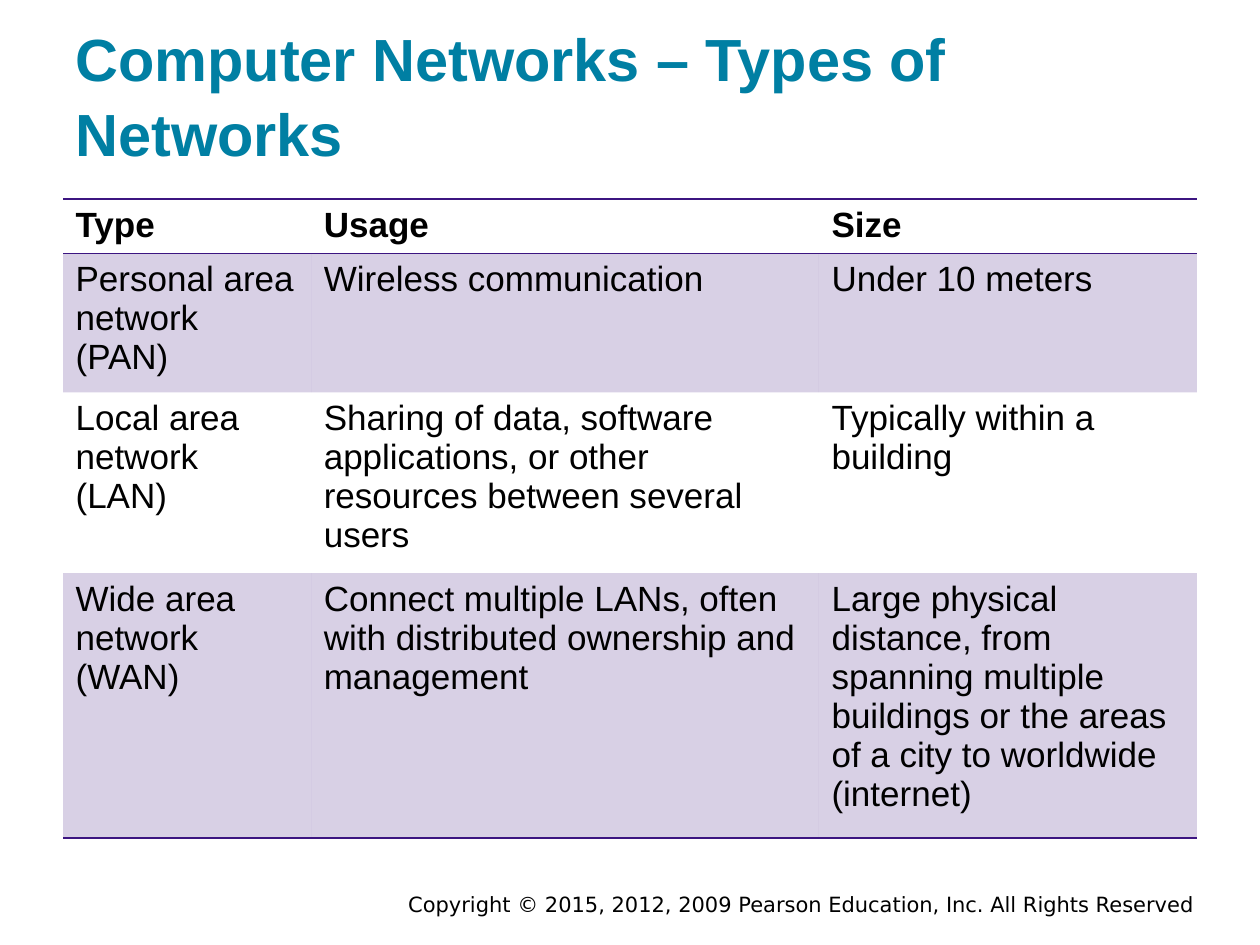
from dataclasses import dataclass

from lxml.etree import SubElement
from pptx import Presentation
from pptx.dml.color import RGBColor
from pptx.enum.text import MSO_ANCHOR, MSO_AUTO_SIZE, PP_ALIGN
from pptx.oxml.ns import qn
from pptx.util import Inches, Pt

TEAL = "007FA3"
PURPLE = "3C1581"
BLACK = "000000"
BAND_OPACITY = 20


@dataclass(frozen=True)
class Network:
    type: str
    usage: str
    size: str


HEADINGS = Network("Type", "Usage", "Size")
NETWORKS = [
    Network("Personal area network (PAN)", "Wireless communication", "Under 10 meters"),
    Network(
        "Local area network (LAN)",
        "Sharing of data, software applications, or other resources between several users",
        "Typically within a building",
    ),
    Network(
        "Wide area network (WAN)",
        "Connect multiple LANs, often with distributed ownership and management",
        "Large physical distance, from spanning multiple buildings or the areas "
        "of a city to worldwide (internet)",
    ),
]
COLUMN_WIDTHS = (1.97, 4.03, 3)
ROW_HEIGHT = 0.41


def color(value: str) -> RGBColor:
    return RGBColor.from_string(value)


def write(frame, text: str, *, size: float, fill: str = BLACK, bold: bool = False,
          font: str = "Arial", align=PP_ALIGN.LEFT, spacing: float = 1.0) -> None:
    paragraph = frame.paragraphs[0]
    paragraph.alignment = align
    paragraph.line_spacing = spacing
    run = paragraph.add_run()
    run.text = text
    run.font.name = font
    run.font.size = Pt(size)
    run.font.bold = bold
    run.font.color.rgb = color(fill)


def set_margins(frame, horizontal: float, vertical: float) -> None:
    frame.margin_left = frame.margin_right = Inches(horizontal)
    frame.margin_top = frame.margin_bottom = Inches(vertical)


def shade(cell, fill: str, opacity: int) -> None:
    cell.fill.solid()
    cell.fill.fore_color.rgb = color(fill)
    rgb = cell._tc.tcPr.find(f"{qn('a:solidFill')}/{qn('a:srgbClr')}")
    SubElement(rgb, qn("a:alpha"), val=str(opacity * 1000))


def rule(cell, edges: str) -> None:
    properties = cell._tc.get_or_add_tcPr()
    for position, edge in enumerate("LRTB"):
        ruled = edge in edges
        line = properties.makeelement(qn(f"a:ln{edge}"), {"w": str(Pt(1) if ruled else 0)})
        if ruled:
            solid = SubElement(line, qn("a:solidFill"))
            SubElement(solid, qn("a:srgbClr"), val=PURPLE)
        else:
            SubElement(line, qn("a:noFill"))
        properties.insert(position, line)


def add_title(slide, text: str) -> None:
    title = slide.shapes.title
    title.left, title.top = Inches(0.5), Inches(0.24)
    title.width, title.height = Inches(9), Inches(1.2)
    frame = title.text_frame
    frame.word_wrap = True
    frame.auto_size = MSO_AUTO_SIZE.NONE
    frame.vertical_anchor = MSO_ANCHOR.BOTTOM
    set_margins(frame, 0.1, 0.1)
    write(frame, text, size=34, fill=TEAL, bold=True, spacing=1.05)


def add_copyright(slide, text: str) -> None:
    box = slide.shapes.add_textbox(Inches(1.75), Inches(7.03), Inches(7.83), Inches(0.22))
    frame = box.text_frame
    frame.word_wrap = True
    set_margins(frame, 0.1, 0.05)
    write(frame, text, size=12, font="DejaVu Sans", align=PP_ALIGN.RIGHT)


def add_network_table(slide, networks: list[Network]) -> None:
    records = [HEADINGS, *networks]
    table = slide.shapes.add_table(
        len(records), len(COLUMN_WIDTHS), Inches(0.5), Inches(1.58),
        Inches(sum(COLUMN_WIDTHS)), Inches(ROW_HEIGHT * len(records)),
    ).table
    table.horz_banding = False
    for column, width in zip(table.columns, COLUMN_WIDTHS):
        column.width = Inches(width)
    for index, (row, record) in enumerate(zip(table.rows, records)):
        row.height = Inches(ROW_HEIGHT)
        heading = index == 0
        last = index == len(records) - 1
        edges = "TB" if heading else "T" if index == 1 else "B" if last else ""
        for cell, text in zip(row.cells, (record.type, record.usage, record.size)):
            set_margins(cell, 0.1, 0.05)
            write(cell.text_frame, text, size=20, bold=heading)
            if index % 2:
                shade(cell, PURPLE, BAND_OPACITY)
            else:
                cell.fill.background()
            rule(cell, edges)


def main() -> None:
    presentation = Presentation()
    presentation.slide_width = Inches(10)
    presentation.slide_height = Inches(7.5)
    slide = presentation.slides.add_slide(presentation.slide_layouts[5])
    add_copyright(slide, "Copyright © 2015, 2012, 2009 Pearson Education, Inc. All Rights Reserved")
    add_title(slide, "Computer Networks – Types of Networks")
    add_network_table(slide, NETWORKS)
    presentation.save("out.pptx")


if __name__ == "__main__":
    main()
